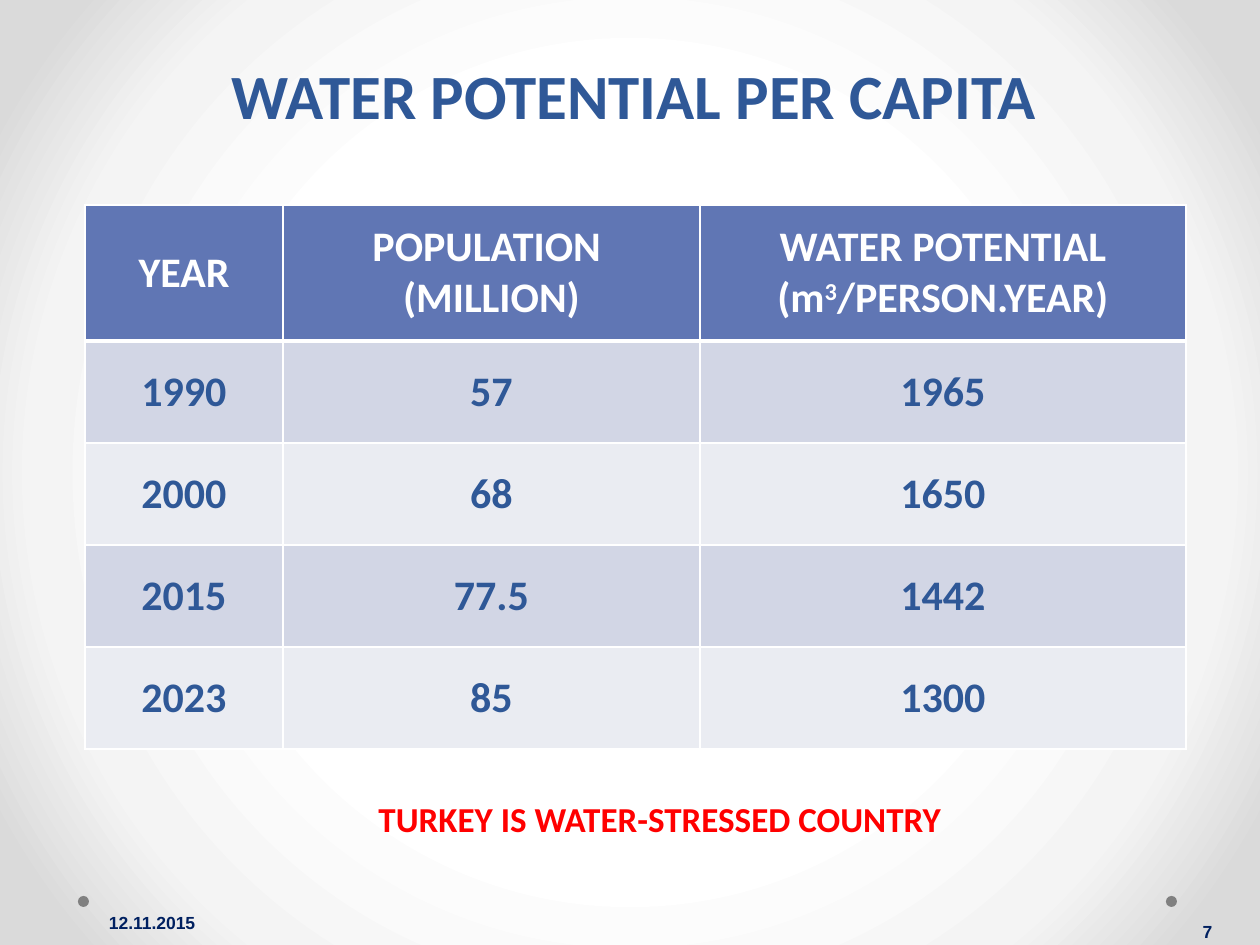
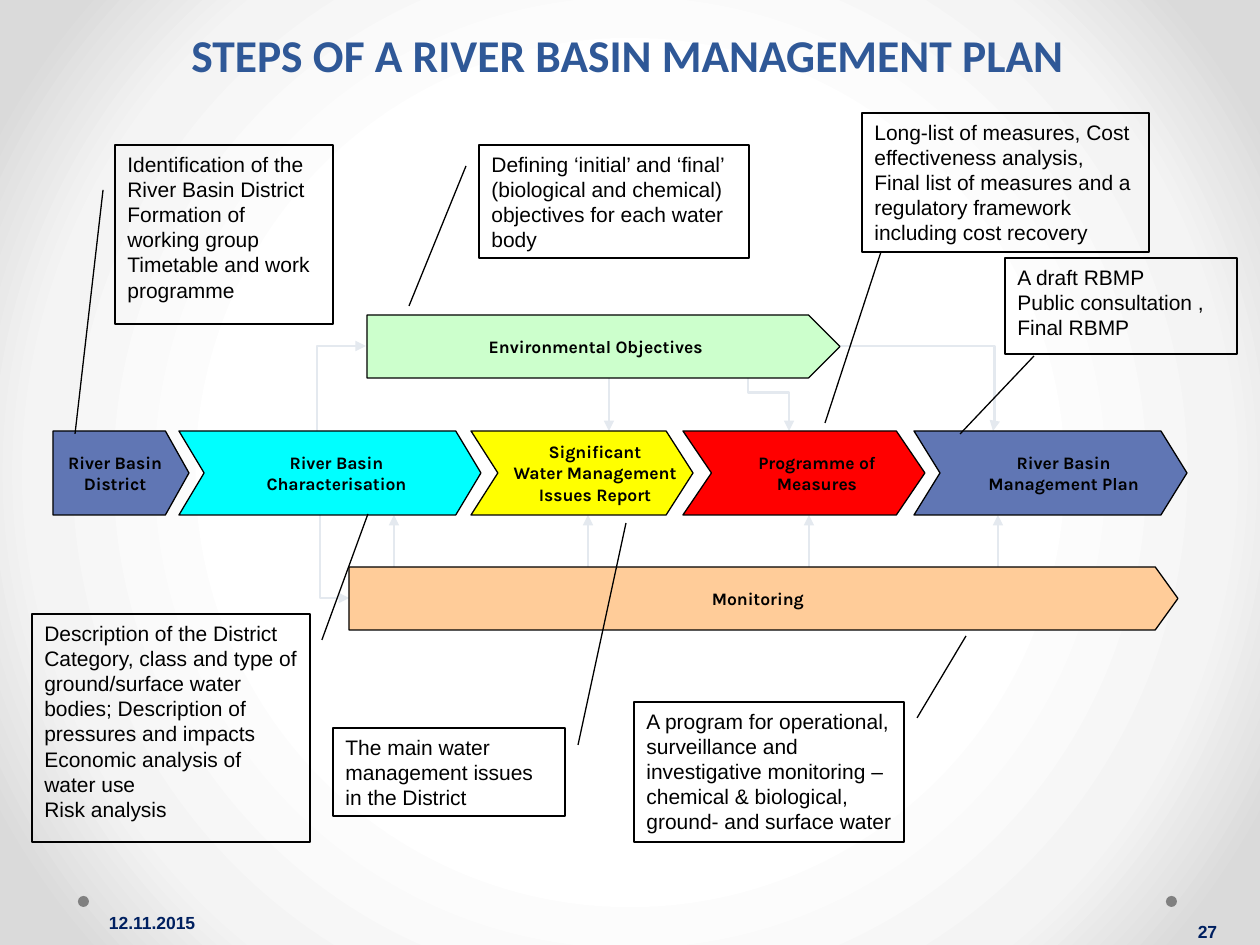
from collections import namedtuple

from pptx import Presentation
from pptx.dml.color import RGBColor
from pptx.enum import shapes, text
from pptx.oxml import ns, parse_xml
from pptx.util import Inches, Pt

PX_PER_INCH = 126
WHITE = RGBColor(0xFF, 0xFF, 0xFF)
BLACK = RGBColor(0x00, 0x00, 0x00)
NAVY = RGBColor(0x00, 0x20, 0x60)
TITLE_BLUE = RGBColor(0x2F, 0x58, 0x97)
BLUE = RGBColor(0x60, 0x76, 0xB4)
BAND_DARK = RGBColor(0xD2, 0xD6, 0xE5)
BAND_LIGHT = RGBColor(0xEA, 0xEC, 0xF2)
RED = RGBColor(0xFF, 0x00, 0x00)
CYAN = RGBColor(0x00, 0xFF, 0xFF)
YELLOW = RGBColor(0xFF, 0xFF, 0x00)
GREEN = RGBColor(0xCC, 0xFF, 0xCC)
PEACH = RGBColor(0xFF, 0xCC, 0x99)
ARROW_GREY = RGBColor(0xE4, 0xE9, 0xEF)
DOT_GREY = RGBColor(0x80, 0x80, 0x80)
BACKDROP = ((50, WHITE), (76, RGBColor(0xF4, 0xF4, 0xF4)), (92, RGBColor(0xDA, 0xDA, 0xDA)))

Style = namedtuple("Style", "name size color bold align")
CENTER, LEFT = text.PP_ALIGN.CENTER, text.PP_ALIGN.LEFT
TOP, MIDDLE, BOTTOM = text.MSO_ANCHOR.TOP, text.MSO_ANCHOR.MIDDLE, text.MSO_ANCHOR.BOTTOM
TITLE = Style("Calibri", 36, TITLE_BLUE, True, CENTER)
LONG_TITLE = TITLE._replace(size=26)
WARNING = TITLE._replace(size=20, color=RED)
CELL = TITLE._replace(size=24)
HEADER = CELL._replace(color=WHITE)
FOOTER = Style("Arial", 10, NAVY, True, CENTER)
STEP = Style("Karla", 10, BLACK, True, CENTER)
NOTE = Style("Arial", 12, BLACK, False, LEFT)
KIND = shapes.MSO_SHAPE


def px(*lengths):
    """Turn px lengths into a list of EMU."""
    return [round(length * Inches(1) / PX_PER_INCH) for length in lengths]


def write(frame, lines, style, margin=0, indent=0):
    """Fill a text frame with one paragraph per line; a ^ mark encloses superscripts."""
    for index, line in enumerate(lines):
        para = frame.paragraphs[0] if index == 0 else frame.add_paragraph()
        para.alignment = style.align
        if margin:
            properties = para._p.get_or_add_pPr()
            properties.set("marL", str(px(margin)[0]))
            properties.set("indent", str(px(indent)[0]))
        font = para.font
        font.name, font.size, font.bold = style.name, Pt(style.size), style.bold
        font.color.rgb = style.color
        for part, words in enumerate(line.split("^")):
            span = para.add_run()
            span.text = words
            if part % 2:
                span._r.get_or_add_rPr().set("baseline", "30000")


def add_label(page, box, line, style, anchor, insets=(0, 0)):
    """Add a one-line text box with the given side and top insets."""
    frame = page.shapes.add_textbox(*px(*box)).text_frame
    frame.word_wrap = True
    frame.vertical_anchor = anchor
    frame.margin_left = frame.margin_right = Inches(insets[0])
    frame.margin_top = Inches(insets[1])
    frame.margin_bottom = 0
    write(frame, [line], style)
    return frame


def add_block(page, kind, box, fill=None, line=BLACK):
    """Add a preset shape without shadow."""
    block = page.shapes.add_shape(kind, *px(*box))
    block.shadow.inherit = False
    if fill is None:
        block.fill.background()
    else:
        block.fill.solid()
        block.fill.fore_color.rgb = fill
    if line is None:
        block.line.fill.background()
    else:
        block.line.color.rgb = line
        block.line.width = Pt(0.75)
    return block


def add_arrow(page, start, end, kind=shapes.MSO_CONNECTOR.STRAIGHT):
    """Add a pale connector with a triangle at its end."""
    arrow = page.shapes.add_connector(kind, *px(*start, *end))
    arrow.line.color.rgb = ARROW_GREY
    arrow.line.width = Pt(1.25)
    arrow.line._get_or_add_ln().append(parse_xml(f'<a:tailEnd {ns.nsdecls("a")} type="triangle"/>'))
    arrow._element.spPr.append(parse_xml(f'<a:effectLst {ns.nsdecls("a")}/>'))
    return arrow


def add_elbow(page, start, end, preset, bend=None, upright=True):
    """Add a bent arrow, which leaves its start vertically when upright."""
    (x1, y1), (x2, y2) = start, end
    if upright:
        mid_x, mid_y = (x1 + x2) / 2, (y1 + y2) / 2
        half_w, half_h = abs(y2 - y1) / 2, abs(x2 - x1) / 2
        start, end = (mid_x - half_w, mid_y - half_h), (mid_x + half_w, mid_y + half_h)
    arrow = add_arrow(page, start, end, shapes.MSO_CONNECTOR.ELBOW)
    properties = arrow._element.spPr
    if upright:
        frame = properties.find(ns.qn("a:xfrm"))
        frame.set("rot", str((270 if y2 > y1 else 90) * 60000))
        frame.set("flipH", "1")
        frame.set("flipV", "0" if y2 > y1 else "1")
    geometry = properties.find(ns.qn("a:prstGeom"))
    geometry.set("prst", preset)
    if bend is not None:
        guide = f'<a:gd {ns.nsdecls("a")} name="adj1" fmla="val {round(bend * 100000)}"/>'
        geometry.find(ns.qn("a:avLst")).append(parse_xml(guide))


def add_page(deck, number):
    """Add a blank page with the round gradient, corner dots, date and number."""
    page = deck.slides.add_slide(deck.slide_layouts[6])
    page.background.fill.gradient()
    stops = "".join(f'<a:gs pos="{at * 1000}"><a:srgbClr val="{color}"/></a:gs>' for at, color in BACKDROP)
    plain = page._element.find(".//" + ns.qn("a:gradFill"))
    plain.getparent().replace(plain, parse_xml(
        f'<a:gradFill {ns.nsdecls("a")} rotWithShape="1"><a:gsLst>{stops}</a:gsLst><a:path path="circle">'
        '<a:fillToRect l="50000" t="50000" r="50000" b="50000"/></a:path></a:gradFill>'))
    for left in (78, 1166):
        add_block(page, KIND.OVAL, (left, 896, 11, 11), DOT_GREY, None)
    add_label(page, (5, 898, 294, 50), "12.11.2015", FOOTER, MIDDLE)
    add_label(page, (1155, 892, 105, 50), number, FOOTER, BOTTOM)
    return page


def set_borders(cell, top, bottom):
    """Give a cell white borders, with the top and bottom widths in points."""
    properties = cell._tc.get_or_add_tcPr()
    for side, width in (("L", 1), ("R", 1), ("T", top), ("B", bottom)):
        properties.append(parse_xml(
            f'<a:ln{side} {ns.nsdecls("a")} w="{Pt(width)}"><a:solidFill><a:srgbClr val="{WHITE}"/>'
            f'</a:solidFill></a:ln{side}>'))


def add_capita_table(page, box):
    """Add the table of population and water potential by year."""
    rows = [
        ("YEAR", "POPULATION \n(MILLION)", "WATER POTENTIAL (m^3^/PERSON.YEAR)"),
        ("1990", "57", "1965"),
        ("2000", "68", "1650"),
        ("2015", "77.5", "1442"),
        ("2023", "85", "1300"),
    ]
    table = page.shapes.add_table(len(rows), 3, *px(*box)).table
    for column, width in zip(table.columns, px(198, 417, 486)):
        column.width = width
    for index, values in enumerate(rows):
        table.rows[index].height = px(102 if index else 136)[0]
        fill = BLUE if index == 0 else BAND_DARK if index % 2 else BAND_LIGHT
        for cell, value in zip(table.rows[index].cells, values):
            set_borders(cell, 3 if index == 1 else 1, 1 if index else 3)
            cell.fill.solid()
            cell.fill.fore_color.rgb = fill
            cell.vertical_anchor = MIDDLE
            write(cell.text_frame, value.split("\n"), CELL if index else HEADER)


def add_step(page, kind, box, bend, fill, lines, margin=0, indent=0):
    """Add one labelled block of the plan."""
    step = add_block(page, kind, box, fill)
    step.adjustments[0] = bend
    frame = step.text_frame
    frame.word_wrap = False
    frame.vertical_anchor = MIDDLE
    write(frame, lines, STEP, margin, indent)


def add_plan_flow(page, box):
    """Add the chain of steps between the objectives and monitoring bars."""
    left, top, _, height = box
    bar, row_top, row_height = 63, top + 116, 84
    row_end, monitoring_top = row_top + row_height, top + height - bar
    for x in (341, 535, 756, 945):
        add_arrow(page, (left + x, monitoring_top), (left + x, row_end))
    add_arrow(page, (left + 556, top + bar), (left + 556, row_top))
    add_elbow(page, (left + 695, top + 39), (left + 736, row_top), "bentConnector3", 0.5)
    add_elbow(page, (left + 785, top + 31), (left + 940, row_top), "bentConnector3", 1.01, False)
    add_elbow(page, (left + 264, row_top), (left + 313, top + 31), "bentConnector2")
    add_elbow(page, (left + 267, row_end), (left + 296, monitoring_top + 31), "bentConnector2")
    steps = [
        (0, 136, 0.28, BLUE, ("River Basin", "District"), 0, 0),
        (126, 302, 0.3, CYAN, ("River Basin", "Characterisation"), 26, -13),
        (418, 222, 0.32, YELLOW, ("Significant", "Water Management", "Issues Report"), 26, 0),
        (630, 242, 0.34, RED, ("Programme of", "Measures"), 26, 0),
        (861, 273, 0.31, BLUE, ("River Basin", "Management Plan"), 26, 0),
    ]
    for x, width, *look in steps:
        kind = KIND.CHEVRON if x else KIND.PENTAGON
        add_step(page, kind, (left + x, row_top, width, row_height), *look)
    add_step(page, KIND.PENTAGON, (left + 314, top, 473, bar), 0.5, GREEN, ["Environmental Objectives"])
    add_step(page, KIND.PENTAGON, (left + 296, monitoring_top, 829, bar), 0.36, PEACH, ["Monitoring"])


def add_callouts(page, box):
    """Add the notes, each with a leader line from one point to another."""
    notes = [
        ((83, 32, 218, 179), (71, 77), (43, 321), (
            "Identification of the River Basin District", "Formation of working group",
            "Timetable and work programme")),
        ((0, 501, 278, 228), (290, 527), (336, 401), (
            "Description of the District",
            "Category, class and type of ground/surface water bodies; Description of pressures and impacts",
            "Economic analysis of water use", "Risk analysis")),
        ((447, 32, 270, 113), (434, 53), (377, 193), (
            "Defining ‘initial’ and ‘final’ (biological and chemical) objectives for each water body",)),
        ((602, 589, 270, 140), (885, 605), (934, 523), (
            "A program for operational, surveillance and investigative monitoring – "
            "chemical & biological, ground- and surface water",)),
        ((301, 615, 232, 88), (546, 632), (594, 410), (
            "The main water management issues in the District",)),
        ((830, 0, 287, 139), (849, 139), (793, 310), (
            "Long-list of measures, Cost effectiveness analysis,",
            "Final list of measures and a regulatory framework including cost recovery")),
        ((973, 145, 232, 96), (1002, 243), (928, 321), (
            "A draft RBMP", "Public consultation , Final RBMP")),
    ]
    for (x, y, width, height), start, end, lines in notes:
        note = add_block(page, KIND.LINE_CALLOUT_1, (box[0] + x, box[1] + y, width, height))
        for index, (point_x, point_y) in enumerate((start, end)):
            note.adjustments[2 * index] = (point_y - y) / height
            note.adjustments[2 * index + 1] = (point_x - x) / width
        note.text_frame.word_wrap = True
        note.text_frame.vertical_anchor = TOP
        write(note.text_frame, lines, NOTE)


def build_capita_page(deck):
    """Build the page on water potential per capita."""
    page = add_page(deck, "7")
    title = add_label(page, (168, 59, 932, 79), "WATER POTENTIAL PER CAPITA", TITLE, BOTTOM, (0.1, 0.05))
    title.margin_bottom = Inches(0.05)
    title.paragraphs[0].line_spacing = Pt(58)
    add_capita_table(page, (85, 205, 1101, 544))
    add_label(page, (194, 760, 932, 79), "TURKEY IS WATER-STRESSED COUNTRY", WARNING, BOTTOM, (0, 0.05))


def build_plan_page(deck):
    """Build the page on the steps of a river basin management plan."""
    page = add_page(deck, "27")
    add_plan_flow(page, (53, 315, 1134, 315))
    add_callouts(page, (32, 113, 1205, 729))
    add_label(page, (121, 16, 1014, 66), "STEPS OF A RIVER BASIN MANAGEMENT PLAN", LONG_TITLE, BOTTOM, (0, 0.05))


def main():
    """Build the deck and save it."""
    deck = Presentation()
    deck.slide_width, deck.slide_height = px(1260, 945)
    build_capita_page(deck)
    build_plan_page(deck)
    deck.save("out.pptx")


if __name__ == "__main__":
    main()
